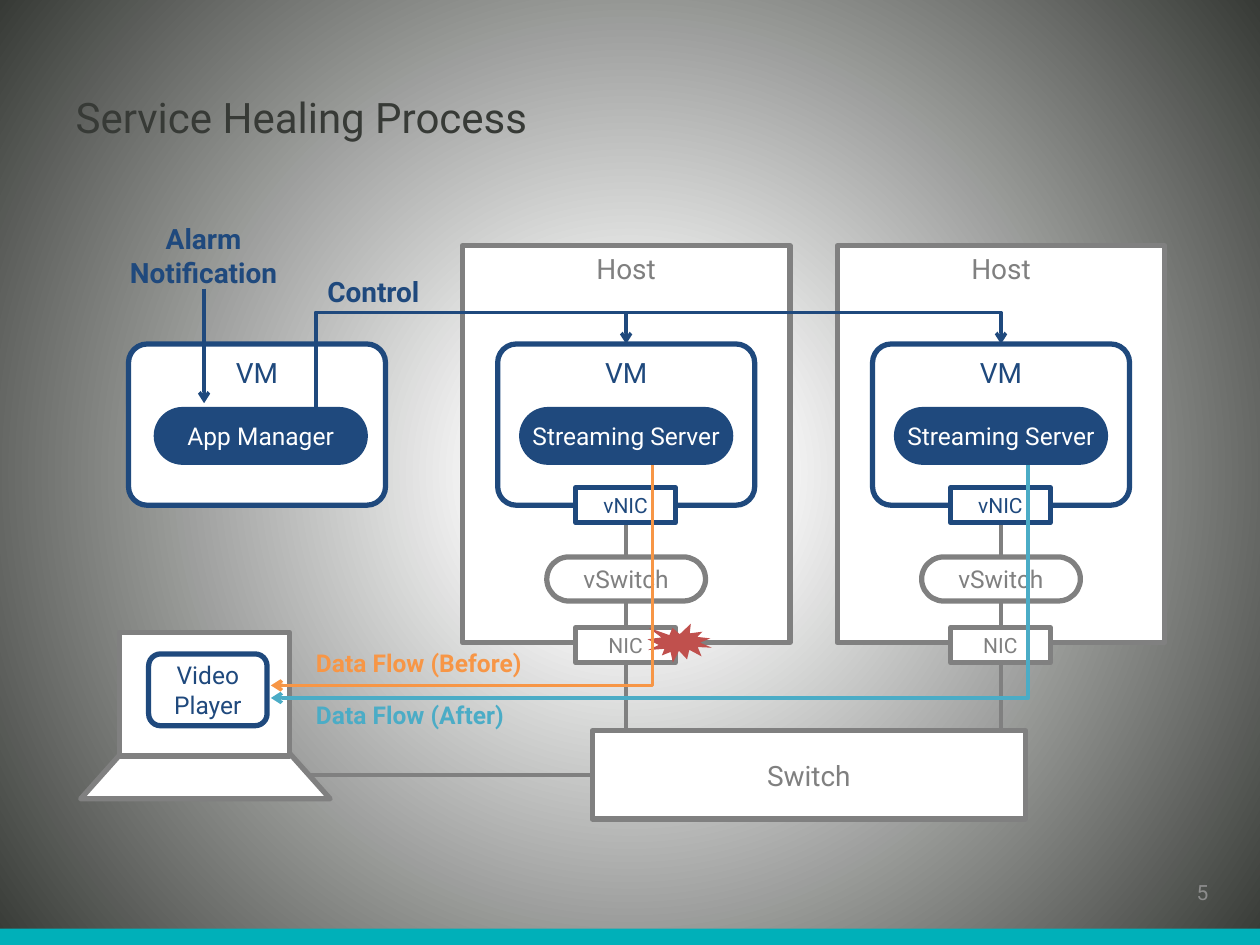
"""Build the Service Healing Process slide."""
from dataclasses import dataclass
from typing import Optional

import pptx
import pptx.dml.color
import pptx.enum.shapes
import pptx.enum.text
import pptx.oxml
import pptx.oxml.ns
import pptx.util
from pptx.util import Inches

SHAPE = pptx.enum.shapes.MSO_SHAPE
CONNECTOR = pptx.enum.shapes.MSO_CONNECTOR
ANCHOR = pptx.enum.text.MSO_ANCHOR
ALIGN = pptx.enum.text.PP_ALIGN
qn = pptx.oxml.ns.qn
FONT = "Roboto"
NAVY, GRAY, WHITE, DARK = "1F497D", "808080", "FFFFFF", "373A36"
ORANGE, CYAN, RED, TEAL = "F79646", "4BACC6", "C0504D", "00B0B9"
HOST_STEP = 2.975


@dataclass
class Box:
    left: float
    top: float
    width: float
    height: float
    text: str = ""
    color: str = GRAY
    size: float = 16
    fill: str = WHITE
    line: Optional[str] = GRAY
    kind: int = SHAPE.ROUNDED_RECTANGLE
    adj: Optional[float] = None
    anchor: int = ANCHOR.MIDDLE
    inset: bool = True


@dataclass
class Label:
    left: float
    top: float
    width: float
    height: float
    text: str
    color: str
    size: float = 16
    bold: bool = True
    align: int = ALIGN.LEFT
    anchor: int = ANCHOR.TOP


def rgb(value: str) -> pptx.dml.color.RGBColor:
    """Return the colour for a hex string."""
    return pptx.dml.color.RGBColor.from_string(value)


def write(tf, text: str, size: float, color: str, align: int, bold: bool = False) -> None:
    """Write one formatted run into a text frame."""
    tf.word_wrap = True
    p = tf.paragraphs[0]
    p.alignment = align
    r = p.add_run()
    r.text = text
    r.font.name = FONT
    r.font.size = pptx.util.Pt(size)
    r.font.bold = bold
    r.font.color.rgb = rgb(color)


def draw_box(s, box: Box) -> None:
    """Draw a filled shape with optional outline and text."""
    sp = s.shapes.add_shape(box.kind, Inches(box.left), Inches(box.top),
                            Inches(box.width), Inches(box.height))
    sp.shadow.inherit = False
    if box.adj is not None:
        sp.adjustments[0] = box.adj
    sp.fill.solid()
    sp.fill.fore_color.rgb = rgb(box.fill)
    if box.line:
        sp.line.color.rgb = rgb(box.line)
        sp.line.width = pptx.util.Pt(3)
    else:
        sp.line.fill.background()
    if box.text:
        tf = sp.text_frame
        tf.vertical_anchor = box.anchor
        if not box.inset:
            tf.margin_left = tf.margin_right = tf.margin_top = tf.margin_bottom = 0
        write(tf, box.text, box.size, box.color, ALIGN.CENTER)


def draw_label(s, label: Label) -> None:
    """Draw a free-standing text label."""
    sp = s.shapes.add_textbox(Inches(label.left), Inches(label.top),
                              Inches(label.width), Inches(label.height))
    sp.text_frame.vertical_anchor = label.anchor
    write(sp.text_frame, label.text, label.size, label.color, label.align, label.bold)


def draw_line(s, x1: float, y1: float, x2: float, y2: float, color: str = GRAY,
              width: float = 2.25, arrow: bool = False, kind: int = CONNECTOR.STRAIGHT):
    """Draw a connector and return it."""
    sp = s.shapes.add_connector(kind, Inches(x1), Inches(y1), Inches(x2), Inches(y2))
    sp.line.color.rgb = rgb(color)
    sp.line.width = pptx.util.Pt(width)
    if arrow:
        pptx.oxml.ns
        ln = sp._element.spPr.find(qn("a:ln"))
        ln.append(pptx.oxml.parse_xml(
            f'<a:tailEnd {pptx.oxml.ns.nsdecls("a")} type="arrow"/>'))
    sp._element.spPr.append(pptx.oxml.parse_xml(
        f'<a:effectLst {pptx.oxml.ns.nsdecls("a")}/>'))
    return sp


def draw_elbow(s, x1: float, y1: float, x2: float, y2: float, color: str,
               preset: str, degrees: int, adj: Optional[float] = None) -> None:
    """Draw a quarter-turned bent arrow that leaves vertically."""
    cx, cy = (x1 + x2) / 2, (y1 + y2) / 2
    dx, dy = abs(y2 - y1) / 2, abs(x2 - x1) / 2
    sp = draw_line(s, cx - dx, cy - dy, cx + dx, cy + dy, color, 2, True, CONNECTOR.ELBOW)
    spPr = sp._element.spPr
    spPr.find(qn("a:xfrm")).set("rot", str(degrees * 60000))
    geom = spPr.find(qn("a:prstGeom"))
    geom.set("prst", preset)
    if adj is not None:
        geom.find(qn("a:avLst")).append(pptx.oxml.parse_xml(
            f'<a:gd {pptx.oxml.ns.nsdecls("a")} name="adj1" fmla="val {round(adj * 100000)}"/>'))


def draw_vm(s, left: float) -> None:
    """Draw a virtual machine frame."""
    draw_box(s, Box(left, 2.73, 2.04, 1.28, "VM", NAVY, line=NAVY, adj=0.116,
                    anchor=ANCHOR.TOP))


def draw_app(s, left: float, text: str) -> None:
    """Draw an application pill."""
    draw_box(s, Box(left, 3.23, 1.7, 0.46, text, WHITE, 14, NAVY, None, adj=0.5, inset=False))


def draw_host(s, left: float) -> None:
    """Draw a host with its virtual machine and network stack."""
    center = left + 1.3
    draw_box(s, Box(left, 1.95, 2.6, 3.15, "Host", adj=0, anchor=ANCHOR.TOP))
    draw_vm(s, left + 0.28)
    draw_line(s, center, 4.14, center, 4.98)
    draw_line(s, center, 5.26, center, 6.12)
    for top, text, color in ((3.87, "vNIC", NAVY), (4.98, "NIC", GRAY)):
        draw_box(s, Box(left + 0.9, top, 0.79, 0.28, text, color, 12, line=color,
                        kind=SHAPE.RECTANGLE))
    draw_box(s, Box(left + 0.67, 4.42, 1.26, 0.35, "vSwitch", size=14, adj=0.5, inset=False))


def draw_background(s) -> None:
    """Fill the background with a circular gradient."""
    fill = s.background.fill
    fill.gradient()
    for stop, position, color in zip(fill.gradient_stops, (0.15, 1), (WHITE, DARK)):
        stop.position = position
        stop.color.rgb = rgb(color)
    grad = next(s._element.iter(qn("a:gradFill")))
    grad.replace(grad.find(qn("a:lin")), pptx.oxml.parse_xml(
        f'<a:path {pptx.oxml.ns.nsdecls("a")} path="circle">'
        '<a:fillToRect l="50000" t="50000" r="50000" b="50000"/></a:path>'))


def main() -> None:
    """Create and save the presentation."""
    prs = pptx.Presentation()
    prs.slide_width, prs.slide_height = Inches(10), Inches(7.5)
    s = prs.slides.add_slide(prs.slide_layouts[5])
    draw_background(s)
    title = s.shapes.title
    title.left, title.top = Inches(0.5), Inches(0.3)
    title.width, title.height = Inches(9), Inches(1.25)
    title.text_frame.vertical_anchor = ANCHOR.MIDDLE
    write(title.text_frame, "Service Healing Process", 24, DARK, ALIGN.LEFT)

    draw_box(s, Box(0, 7.37, 10.03, 0.17, fill=TEAL, line=None, kind=SHAPE.RECTANGLE))
    draw_line(s, 1.83, 6.15, 4.7, 6.15)
    hosts = [3.67 + i * HOST_STEP for i in range(2)]
    for left in hosts:
        draw_host(s, left)
    draw_box(s, Box(0.64, 5.23, 1.98, 1.11, kind=SHAPE.ISOSCELES_TRIANGLE))
    draw_box(s, Box(0.95, 5.02, 1.35, 0.98, kind=SHAPE.RECTANGLE))
    draw_box(s, Box(1.18, 5.19, 0.94, 0.57, "Video Player", NAVY, 14, line=NAVY, inset=False))
    draw_box(s, Box(4.7, 5.8, 3.44, 0.7, "Switch", adj=0))
    draw_box(s, Box(5.14, 4.95, 0.51, 0.31, fill=RED, line=None, kind=SHAPE.EXPLOSION1))

    draw_elbow(s, 5.18, 3.67, 2.15, 5.44, ORANGE, "bentConnector2", 90)
    draw_elbow(s, 8.16, 3.61, 2.15, 5.54, CYAN, "bentConnector2", 90)
    draw_vm(s, 1.02)
    draw_app(s, 1.22, "App Manager")
    for left in hosts:
        draw_app(s, left + 0.45, "Streaming Server")
        draw_elbow(s, 2.51, 3.23, left + 1.3, 2.73, NAVY, "bentConnector3", 270, 1.5)
    draw_line(s, 1.62, 2.29, 1.62, 3.2, NAVY, 2, True)

    for label in (
        Label(2.41, 5.51, 1.84, 0.34, "Data Flow (After)", CYAN, 14),
        Label(2.41, 5.09, 2.16, 0.34, "Data Flow (Before)", ORANGE, 14),
        Label(2.5, 2.13, 1.18, 0.37, "Control", NAVY),
        Label(0.89, 1.71, 1.45, 0.64, "Alarm Notification", NAVY, align=ALIGN.CENTER),
        Label(9.03, 6.7, 0.66, 0.53, "5", "8C8C8C", 12, False, ALIGN.RIGHT, ANCHOR.BOTTOM),
    ):
        draw_label(s, label)
    prs.save("out.pptx")


if __name__ == "__main__":
    main()
